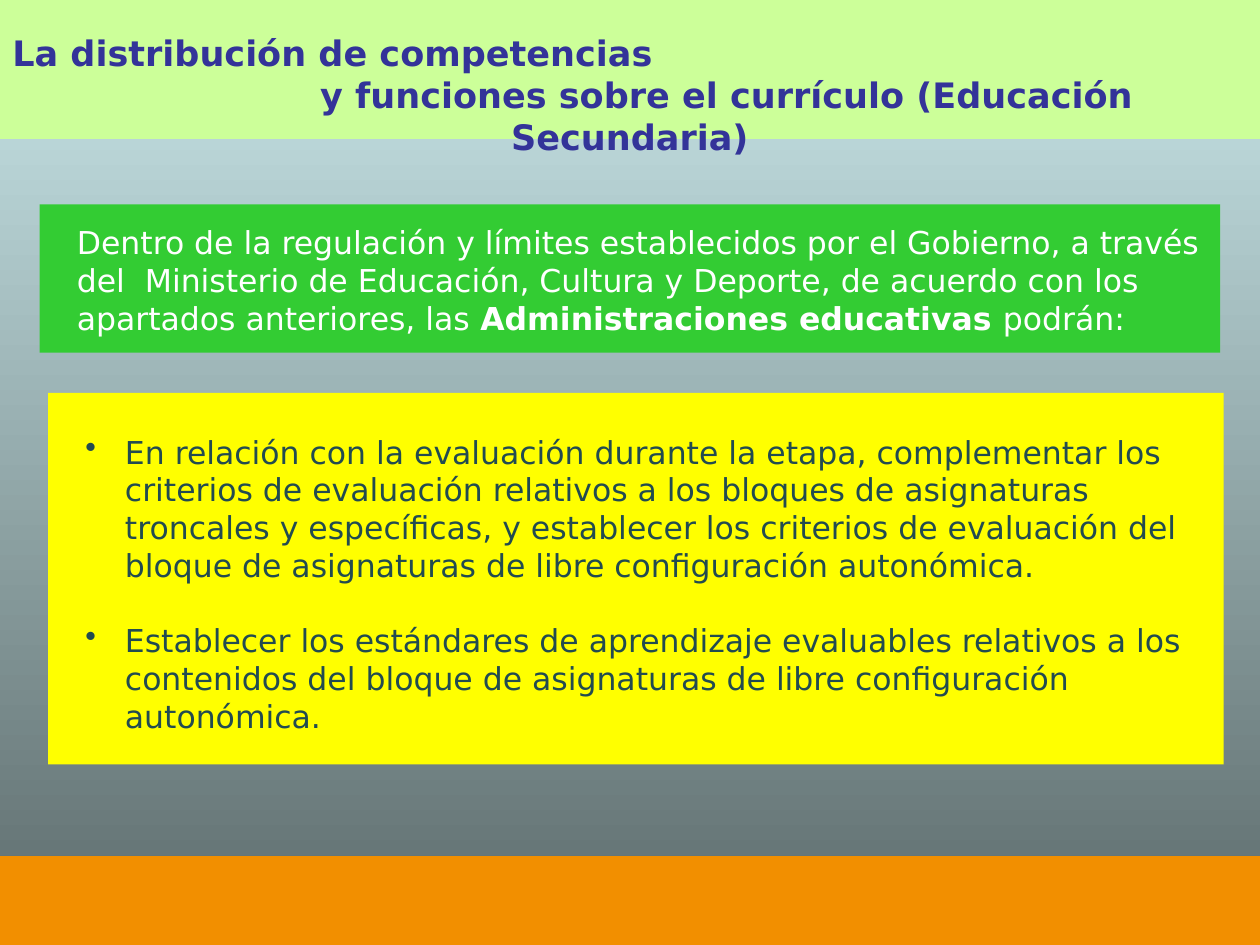
import pptx
import pptx.dml.color
import pptx.enum.shapes
import pptx.enum.text
import pptx.util
from lxml import etree

RGBColor = pptx.dml.color.RGBColor
Cm = pptx.util.Cm
Pt = pptx.util.Pt
ALIGN = pptx.enum.text.PP_ALIGN

SKY = RGBColor(0xC9, 0xE7, 0xE9)
SLATE = RGBColor(0x5D, 0x6B, 0x6C)
LIME = RGBColor(0xCC, 0xFF, 0x99)
ORANGE = RGBColor(0xF2, 0x8F, 0x00)
YELLOW = RGBColor(0xFF, 0xFF, 0x00)
GREEN = RGBColor(0x33, 0xCC, 0x33)
INDIGO = RGBColor(0x33, 0x33, 0x99)
TEAL = RGBColor(0x22, 0x4B, 0x50)
WHITE = RGBColor(0xFF, 0xFF, 0xFF)

FONT = "DejaVu Sans"
WIDTH, HEIGHT = 25.4, 19.05

DUTIES = [
    "En relación con la evaluación durante la etapa, complementar los "
    "criterios de evaluación relativos a los bloques de asignaturas "
    "troncales y específicas, y establecer los criterios de evaluación del "
    "bloque de asignaturas de libre configuración autonómica.",
    "Establecer los estándares de aprendizaje evaluables relativos a los "
    "contenidos del bloque de asignaturas de libre configuración autonómica.",
]


def add_panel(slide, box, color, top_inset=0.13):
    panel = slide.shapes.add_shape(
        pptx.enum.shapes.MSO_SHAPE.RECTANGLE, *(Cm(side) for side in box))
    panel.shadow.inherit = False
    panel.fill.solid()
    panel.fill.fore_color.rgb = color
    panel.line.fill.background()
    frame = panel.text_frame
    frame.word_wrap = True
    frame.vertical_anchor = pptx.enum.text.MSO_ANCHOR.TOP
    frame.margin_top = Cm(top_inset)
    return frame


def format_paragraph(paragraph, align=ALIGN.LEFT, margin=0, indent=0):
    paragraph.alignment = align
    properties = paragraph._p.get_or_add_pPr()
    properties.set("marL", str(Cm(margin)))
    properties.set("indent", str(Cm(indent)))
    return properties


def add_run(paragraph, text, size, color, bold=False):
    run = paragraph.add_run()
    run.text = text
    run.font.name = FONT
    run.font.size = Pt(size)
    run.font.bold = bold
    run.font.color.rgb = color


def add_heading(slide, box):
    frame = add_panel(slide, box, LIME, 0.63)
    opening = frame.paragraphs[0]
    format_paragraph(opening)
    add_run(opening, "La distribución de competencias", 20, INDIGO, True)
    ending = frame.add_paragraph()
    format_paragraph(ending, ALIGN.CENTER, indent=3.9)
    add_run(ending, "y funciones sobre el currículo (Educación Secundaria)",
            20, INDIGO, True)


def add_duties(slide, box):
    frame = add_panel(slide, box, YELLOW, 0.8)
    for number, duty in enumerate(DUTIES):
        paragraph = frame.add_paragraph() if number else frame.paragraphs[0]
        properties = format_paragraph(paragraph, margin=1.3, indent=-0.8)
        if number:
            paragraph.space_before = Pt(21.5)
        bullet = etree.SubElement(properties, pptx.oxml.ns.qn("a:buChar"))
        bullet.set("char", "•")
        add_run(paragraph, duty, 18, TEAL)


def add_introduction(slide, box):
    paragraph = add_panel(slide, box, GREEN, 0.38).paragraphs[0]
    format_paragraph(paragraph, margin=0.5)
    add_run(paragraph,
            "Dentro de la regulación y límites establecidos por el Gobierno, "
            "a través del  Ministerio de Educación, Cultura y Deporte, de "
            "acuerdo con los apartados anteriores, las ", 18, WHITE)
    add_run(paragraph, "Administraciones educativas ", 18, WHITE, True)
    add_run(paragraph, "podrán:", 18, WHITE)


def add_background(slide):
    fill = slide.background.fill
    fill.gradient()
    fill.gradient_angle = 270
    for stop, color in zip(fill.gradient_stops, (SKY, SLATE)):
        stop.color.rgb = color


def main():
    presentation = pptx.Presentation()
    presentation.slide_width = Cm(WIDTH)
    presentation.slide_height = Cm(HEIGHT)
    slide = presentation.slides.add_slide(presentation.slide_layouts[6])
    add_background(slide)
    add_heading(slide, (0, 0, WIDTH, 2.8))
    add_panel(slide, (0, 17.26, WIDTH, HEIGHT - 17.26), ORANGE)
    add_duties(slide, (0.97, 7.92, 23.7, 7.49))
    add_introduction(slide, (0.8, 4.12, 23.8, 2.99))
    presentation.save("out.pptx")


if __name__ == "__main__":
    main()
